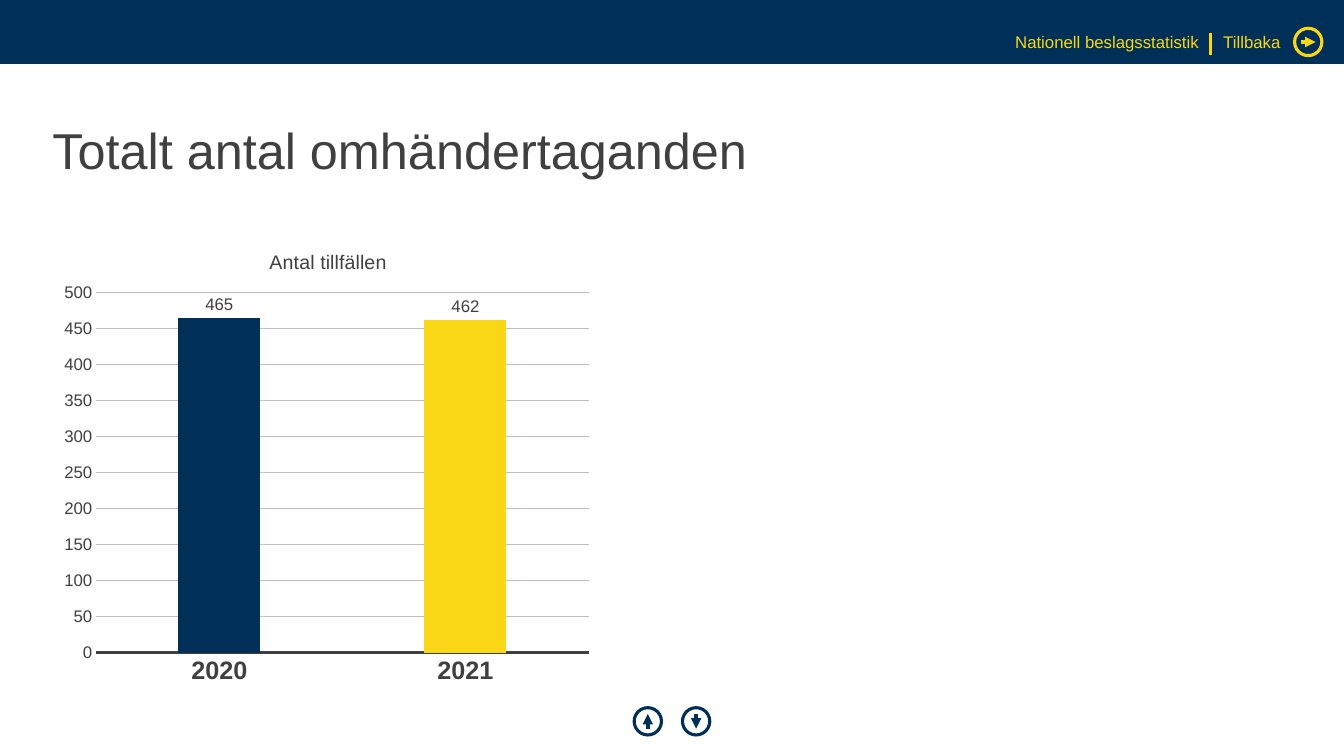
from dataclasses import dataclass

from lxml.etree import SubElement
from pptx import Presentation
from pptx.chart.chart import Chart
from pptx.chart.data import CategoryChartData
from pptx.dml.color import RGBColor
from pptx.dml.fill import FillFormat
from pptx.enum.chart import XL_CHART_TYPE, XL_LABEL_POSITION, XL_TICK_MARK
from pptx.enum.shapes import MSO_CONNECTOR, MSO_SHAPE
from pptx.enum.text import MSO_ANCHOR, PP_ALIGN
from pptx.oxml import parse_xml
from pptx.oxml.ns import nsdecls, qn
from pptx.slide import Slide
from pptx.util import Emu, Pt

EMU_PER_PX = 9525
NAVY, YELLOW, CHARCOAL, GREY = "003057", "F9D616", "404040", "BFBFBF"
FONT = "Arial"
ICON_RADIUS = 13
ARROW_REACH = 7


@dataclass(frozen=True)
class Label:
    text: str
    left: int
    top: int
    width: int
    height: int
    size: int
    color: str
    align: PP_ALIGN = PP_ALIGN.LEFT
    anchor: MSO_ANCHOR = MSO_ANCHOR.TOP


@dataclass(frozen=True)
class ArrowIcon:
    center_x: int
    center_y: int
    step_x: int
    step_y: int
    color: str


LABELS = [
    Label("Totalt antal omhändertaganden", 50, 76, 1179, 139, 36, CHARCOAL,
          anchor=MSO_ANCHOR.MIDDLE),
    Label("Nationell beslagsstatistik", 960, 32, 182, 18, 12, YELLOW, PP_ALIGN.RIGHT),
    Label("Tillbaka", 1165, 32, 64, 18, 12, YELLOW),
]
ICONS = [
    ArrowIcon(1246, 40, 1, 0, YELLOW),
    ArrowIcon(663, 687, 0, 1, NAVY),
    ArrowIcon(617, 687, 0, -1, NAVY),
]


def px(length: int) -> Emu:
    return Emu(length * EMU_PER_PX)


def rgb(color: str) -> RGBColor:
    return RGBColor.from_string(color)


def paint(fill: FillFormat, color: str) -> None:
    fill.solid()
    fill.fore_color.rgb = rgb(color)


def style_font(font, size: int, color: str = CHARCOAL, bold: bool = False) -> None:
    font.name = FONT
    font.size = Pt(size)
    font.bold = bold
    font.color.rgb = rgb(color)


def add_band(page: Slide) -> None:
    band = page.shapes.add_shape(MSO_SHAPE.RECTANGLE, 0, 0, px(1280), px(61))
    band.shadow.inherit = False
    paint(band.fill, NAVY)
    band.line.fill.background()


def add_label(page: Slide, label: Label) -> None:
    box = page.shapes.add_textbox(px(label.left), px(label.top), px(label.width), px(label.height))
    frame = box.text_frame
    frame.word_wrap = True
    frame.vertical_anchor = label.anchor
    frame.margin_left = frame.margin_right = frame.margin_top = frame.margin_bottom = 0
    para = frame.paragraphs[0]
    para.alignment = label.align
    para.line_spacing = 0.9
    span = para.add_run()
    span.text = label.text
    style_font(span.font, label.size, label.color)


def add_line(page: Slide, x1: int, y1: int, x2: int, y2: int, color: str,
             width: float, arrow: bool = False) -> None:
    line = page.shapes.add_connector(MSO_CONNECTOR.STRAIGHT, px(x1), px(y1), px(x2), px(y2))
    line.line.color.rgb = rgb(color)
    line.line.width = Pt(width)
    if arrow:
        SubElement(line.line._get_or_add_ln(), qn("a:tailEnd"), type="triangle")
    SubElement(line._element.spPr, qn("a:effectLst"))


def add_icon(page: Slide, icon: ArrowIcon) -> None:
    reach_x, reach_y = icon.step_x * ARROW_REACH, icon.step_y * ARROW_REACH
    add_line(page, icon.center_x - reach_x, icon.center_y - reach_y,
             icon.center_x + reach_x, icon.center_y + reach_y, icon.color, 2.5, arrow=True)
    ring = page.shapes.add_shape(
        MSO_SHAPE.OVAL, px(icon.center_x - ICON_RADIUS), px(icon.center_y - ICON_RADIUS),
        px(2 * ICON_RADIUS), px(2 * ICON_RADIUS))
    ring.shadow.inherit = False
    ring.fill.background()
    ring.line.color.rgb = rgb(icon.color)
    ring.line.width = Pt(2.25)


def place(parent, index: int, target: str, values: dict[str, float]) -> None:
    for old in parent.findall(qn("c:layout")):
        parent.remove(old)
    layout = parse_xml(f"<c:layout {nsdecls('c')}/>")
    manual = SubElement(layout, qn("c:manualLayout"))
    if target:
        SubElement(manual, qn("c:layoutTarget"), val=target)
    for mode in ("xMode", "yMode"):
        SubElement(manual, qn(f"c:{mode}"), val="edge")
    for name, value in values.items():
        SubElement(manual, qn(f"c:{name}"), val=str(value))
    parent.insert(index, layout)


def style_axes(chart: Chart) -> None:
    years = chart.category_axis
    years.major_tick_mark = XL_TICK_MARK.NONE
    years.format.line.color.rgb = rgb(CHARCOAL)
    years.format.line.width = Pt(2.25)
    style_font(years.tick_labels.font, 18, bold=True)
    counts = chart.value_axis
    counts.minimum_scale, counts.maximum_scale, counts.major_unit = 0, 500, 50
    counts.major_tick_mark = XL_TICK_MARK.NONE
    counts.format.line.fill.background()
    counts.major_gridlines.format.line.color.rgb = rgb(GREY)
    counts.major_gridlines.format.line.width = Pt(0.75)
    style_font(counts.tick_labels.font, 12)


def add_seizure_chart(page: Slide) -> None:
    data = CategoryChartData(number_format="#,##0")
    data.categories = ["2020", "2021"]
    data.add_series("Antal tillfällen", [465, 462])
    chart = page.shapes.add_chart(
        XL_CHART_TYPE.COLUMN_CLUSTERED, px(50), px(216), px(521), px(446), data).chart
    style_font(chart.font, 10)
    chart.has_legend = False
    chart.has_title = True
    span = chart.chart_title.text_frame.paragraphs[0].add_run()
    span.text = "Antal tillfällen"
    style_font(span.font, 14)
    style_axes(chart)

    plot = chart.plots[0]
    plot.vary_by_categories = False
    plot.gap_width = 200
    plot.overlap = -27
    series = plot.series[0]
    for index, color in enumerate([NAVY, YELLOW]):
        paint(series.points[index].format.fill, color)
    labels = series.data_labels
    labels.show_value = True
    labels.position = XL_LABEL_POSITION.OUTSIDE_END
    labels.number_format = "#,##0"
    labels.number_format_is_linked = False
    style_font(labels.font, 12)

    chart_root = chart._chartSpace.chart
    place(chart_root.find(qn("c:title")), 1, "", {"x": 0.39, "y": 0.04})
    place(chart_root.plotArea, 0, "inner", {"x": 0.08, "y": 0.14, "w": 0.9, "h": 0.77})


def main() -> None:
    deck = Presentation()
    deck.slide_width, deck.slide_height = px(1280), px(720)
    page = deck.slides.add_slide(deck.slide_layouts[6])
    add_band(page)
    for label in LABELS:
        add_label(page, label)
    add_line(page, 1153, 31, 1153, 52, YELLOW, 2.25)
    add_seizure_chart(page)
    for icon in ICONS:
        add_icon(page, icon)
    deck.save("out.pptx")


if __name__ == "__main__":
    main()
